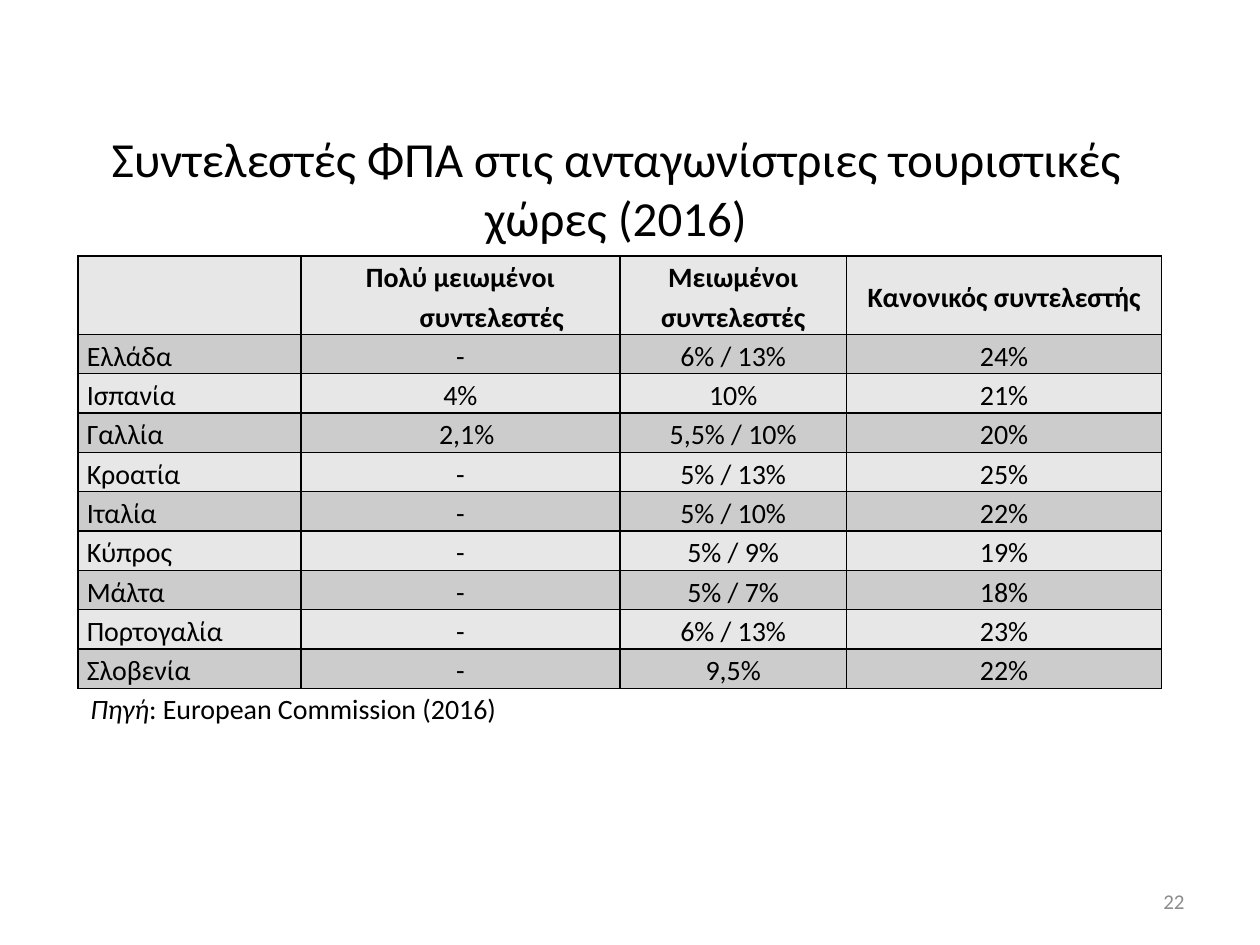
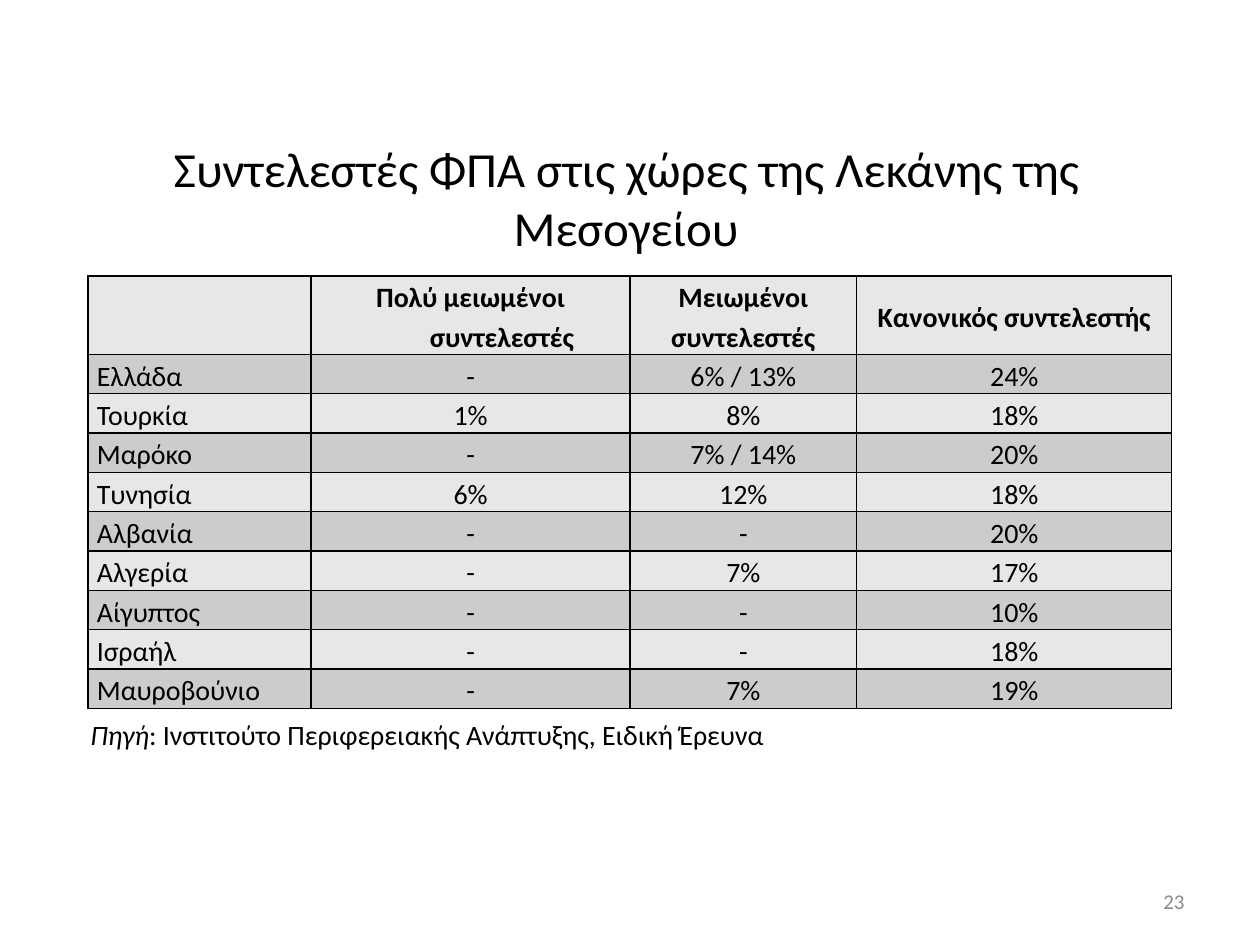
from pptx import Presentation
from pptx.dml.color import RGBColor
from pptx.enum.text import MSO_ANCHOR as Anchor, PP_ALIGN as Align
from pptx.oxml import parse_xml
from pptx.oxml.ns import nsdecls
from pptx.util import Pt

HEADER = ("", "Πολύ μειωμένοι συντελεστές", "Μειωμένοι συντελεστές",
          "Κανονικός συντελεστής")
SLIDES = [
    {
        "number": "22",
        "title": "Συντελεστές ΦΠΑ στις ανταγωνίστριες τουριστικές χώρες (2016)",
        "title_at": (28, 84.2, 648, 46),
        "table_at": (44.6, 146.2),
        "rates": [
            ("Ελλάδα", "-", "6% / 13%", "24%"),
            ("Ισπανία", "4%", "10%", "21%"),
            ("Γαλλία", "2,1%", "5,5% / 10%", "20%"),
            ("Κροατία", "-", "5% / 13%", "25%"),
            ("Ιταλία", "-", "5% / 10%", "22%"),
            ("Κύπρος", "-", "5% / 9%", "19%"),
            ("Μάλτα", "-", "5% / 7%", "18%"),
            ("Πορτογαλία", "-", "6% / 13%", "23%"),
            ("Σλοβενία", "-", "9,5%", "22%"),
        ],
        "source": ": European Commission (2016)",
        "source_at": (44.6, 388, 648, 34),
    },
    {
        "number": "23",
        "title": "Συντελεστές ΦΠΑ στις χώρες της Λεκάνης της Μεσογείου",
        "title_at": (33.8, 84.2, 648, 57),
        "table_at": (50.4, 157.7),
        "rates": [
            ("Ελλάδα", "-", "6% / 13%", "24%"),
            ("Τουρκία", "1%", "8%", "18%"),
            ("Μαρόκο", "-", "7% / 14%", "20%"),
            ("Τυνησία", "6%", "12%", "18%"),
            ("Αλβανία", "-", "-", "20%"),
            ("Αλγερία", "-", "7%", "17%"),
            ("Αίγυπτος", "-", "-", "10%"),
            ("Ισραήλ", "-", "-", "18%"),
            ("Μαυροβούνιο", "-", "7%", "19%"),
        ],
        "source": ": Ινστιτούτο Περιφερειακής Ανάπτυξης, Ειδική Έρευνα",
        "source_at": (44.6, 405.4, 648, 28),
    },
]

COLORS = {"text": "000000", "number": "8C8C8C", "border": "000000",
          "light": "E7E7E7", "dark": "CCCCCC"}
FONT = "Calibri"
NUMBER_AT = (516.2, 500.4, 167.8, 28.8)
COLUMN_WIDTHS = (127.4, 182.2, 129.6, 180)
HEADER_HEIGHT, ROW_HEIGHT = 44.8, 22.5
HANGING = 36
HANGING_EXCEPTIONS = {HEADER[2]: (0, 0), "2,1%": (HANGING, -28.8)}
CELL_FORMAT = {"margin_left": Pt(5), "margin_right": Pt(5),
               "margin_top": 0, "margin_bottom": 0}


def add_span(para, text, size, color="text", **styles):
    span = para.add_run()
    span.text = text
    for name, value in {"name": FONT, "size": Pt(size), **styles}.items():
        setattr(span.font, name, value)
    span.font.color.rgb = RGBColor.from_string(COLORS[color])


def add_text_line(page, place, align):
    """Add a wrapped, middle-anchored text box and return its paragraph."""
    frame = page.shapes.add_textbox(*map(Pt, place)).text_frame
    frame.word_wrap = True
    frame.vertical_anchor = Anchor.MIDDLE
    para = frame.paragraphs[0]
    para.alignment = align
    return para


def paint_cell(cell, color):
    props = cell._tc.get_or_add_tcPr()
    for side in "LRTB":
        props.append(parse_xml(
            f'<a:ln{side} {nsdecls("a")} w="{Pt(1)}"><a:solidFill>'
            f'<a:srgbClr val="{COLORS["border"]}"/></a:solidFill></a:ln{side}>'))
    cell.fill.solid()
    cell.fill.fore_color.rgb = RGBColor.from_string(COLORS[color])


def write_cell(cell, text, is_header, is_country):
    for name, value in CELL_FORMAT.items():
        setattr(cell, name, value)
    cell.vertical_anchor = Anchor.TOP if is_country else Anchor.MIDDLE
    para = cell.text_frame.paragraphs[0]
    para.alignment = Align.JUSTIFY if is_country else Align.CENTER
    para.line_spacing = 1.15
    margin, indent = HANGING_EXCEPTIONS.get(text, (HANGING, -HANGING))
    props = para._p.get_or_add_pPr()
    props.set("marL", str(Pt(margin)))
    props.set("indent", str(Pt(indent)))
    add_span(para, text, 16, bold=is_header)


def add_rate_table(page, place, rates):
    rows = [HEADER, *rates]
    heights = [HEADER_HEIGHT] + [ROW_HEIGHT] * len(rates)
    size = (sum(COLUMN_WIDTHS), sum(heights))
    table = page.shapes.add_table(len(rows), len(HEADER),
                                  *map(Pt, place + size)).table
    table.first_row = table.horz_banding = False
    for column, width in zip(table.columns, COLUMN_WIDTHS):
        column.width = Pt(width)
    for r, (row, height) in enumerate(zip(rows, heights)):
        table.rows[r].height = Pt(height)
        for c, text in enumerate(row):
            cell = table.cell(r, c)
            paint_cell(cell, "dark" if r % 2 else "light")
            if text:
                write_cell(cell, text, is_header=r == 0, is_country=c == 0)


def main():
    deck = Presentation()
    deck.slide_width, deck.slide_height = Pt(720), Pt(540)
    for content in SLIDES:
        page = deck.slides.add_slide(deck.slide_layouts[6])
        title = add_text_line(page, content["title_at"], Align.CENTER)
        add_span(title, content["title"], 28)
        number = add_text_line(page, NUMBER_AT, Align.RIGHT)
        add_span(number, content["number"], 12, "number")
        add_rate_table(page, content["table_at"], content["rates"])
        source = add_text_line(page, content["source_at"], Align.LEFT)
        add_span(source, "Πηγή", 16, italic=True)
        add_span(source, content["source"], 16)
    deck.save("out.pptx")


if __name__ == "__main__":
    main()
